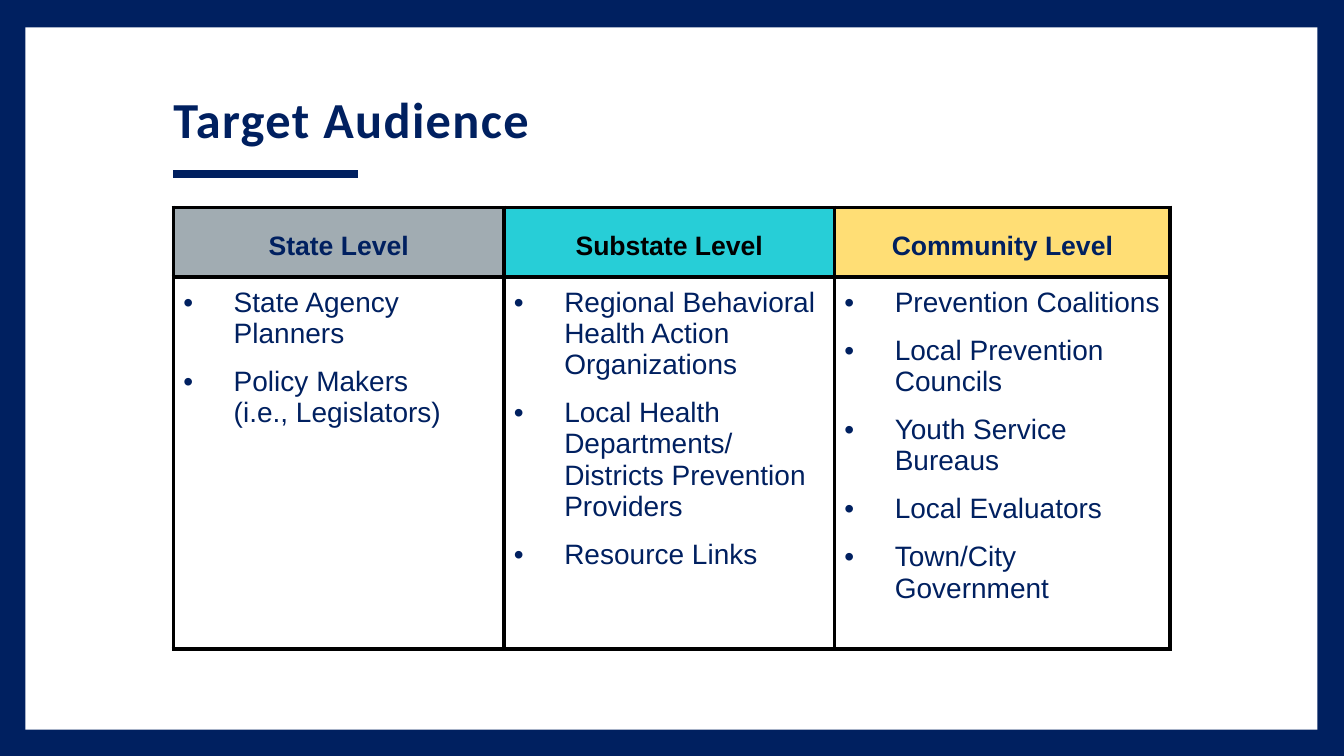
"""Build the Target Audience slide with its three-level table."""
from dataclasses import dataclass

import lxml.etree
import pptx
import pptx.dml.color
import pptx.enum.shapes
import pptx.enum.text
import pptx.oxml.ns
import pptx.util

Cm = pptx.util.Cm
Pt = pptx.util.Pt
ALIGN = pptx.enum.text.PP_ALIGN
ANCHOR = pptx.enum.text.MSO_ANCHOR
qn = pptx.oxml.ns.qn

COLORS = {
    "navy": "002060",
    "white": "FFFFFF",
    "black": "000000",
    "gray": "A1ACB2",
    "teal": "27CED7",
    "yellow": "FFDE75",
}
LEFT = Cm(4.37)
CELL_INSET = Cm(0.25)
HANGING = Cm(1.27)


@dataclass
class Level:
    heading: str
    fill: str
    heading_color: str
    width: float
    members: list[str]


LEVELS = [
    Level("State Level", "gray", "navy", 8.33,
          ["State Agency Planners", "Policy Makers\n(i.e., Legislators)"]),
    Level("Substate Level", "teal", "black", 8.33,
          ["Regional Behavioral Health Action Organizations",
           "Local Health Departments/ Districts Prevention Providers",
           "Resource Links"]),
    Level("Community Level", "yellow", "navy", 8.46,
          ["Prevention Coalitions", "Local Prevention Councils",
           "Youth Service Bureaus", "Local Evaluators",
           "Town/City Government"]),
]


def rgb(name: str) -> pptx.dml.color.RGBColor:
    return pptx.dml.color.RGBColor.from_string(COLORS[name])


def write(paragraph, text: str, *, size: float, color: str = "navy",
          font: str = "Arial", bold: bool = False, align=ALIGN.LEFT,
          line_spacing=None, space_after: float = 0, tracking: int = 0,
          bullet: bool = False) -> None:
    paragraph.text = text
    paragraph.alignment = align
    paragraph.line_spacing = line_spacing
    paragraph.space_after = Pt(space_after)
    for run in paragraph.runs:
        run.font.name = font
        run.font.size = Pt(size)
        run.font.bold = bold
        run.font.color.rgb = rgb(color)
        if tracking:
            run.font._element.set("spc", str(tracking))
    if bullet:
        properties = paragraph._p.get_or_add_pPr()
        properties.set("marL", str(HANGING))
        properties.set("indent", str(-HANGING))
        bullet_font = lxml.etree.SubElement(properties, qn("a:buFont"))
        bullet_font.set("typeface", "Arial")
        lxml.etree.SubElement(properties, qn("a:buChar")).set("char", "•")


def frame_cell(cell, anchor) -> None:
    cell.vertical_anchor = anchor
    cell.margin_left = cell.margin_right = CELL_INSET
    cell.margin_top = cell.margin_bottom = CELL_INSET
    properties = cell._tc.get_or_add_tcPr()
    for side in ("a:lnL", "a:lnR", "a:lnT", "a:lnB"):
        border = lxml.etree.SubElement(properties, qn(side), w=str(Pt(3)))
        solid = lxml.etree.SubElement(border, qn("a:solidFill"))
        lxml.etree.SubElement(solid, qn("a:srgbClr"), val=COLORS["black"])


def add_panel(slide) -> None:
    panel = slide.shapes.add_shape(
        pptx.enum.shapes.MSO_SHAPE.RECTANGLE,
        Cm(0.64), Cm(0.69), Cm(32.56), Cm(17.7))
    panel.shadow.inherit = False
    panel.fill.solid()
    panel.fill.fore_color.rgb = rgb("white")
    panel.line.fill.background()


def add_title(slide) -> None:
    title = slide.shapes.add_textbox(LEFT, Cm(0.28), Cm(27.48), Cm(3.45)).text_frame
    title.word_wrap = True
    title.vertical_anchor = ANCHOR.BOTTOM
    title.margin_left = title.margin_right = 0
    title.margin_top = title.margin_bottom = 0
    write(title.paragraphs[0], "Target Audience", size=36, font="Calibri",
          bold=True, line_spacing=0.8, space_after=6, tracking=100)


def add_underline(slide) -> None:
    underline = slide.shapes.add_connector(
        pptx.enum.shapes.MSO_CONNECTOR.STRAIGHT, LEFT, Cm(4.39), Cm(9.02), Cm(4.39))
    underline.line.color.rgb = rgb("navy")
    underline.line.width = Pt(6)
    lxml.etree.SubElement(underline._element.spPr, qn("a:effectLst"))


def add_audience_table(slide) -> None:
    width = Cm(sum(level.width for level in LEVELS))
    table = slide.shapes.add_table(
        2, len(LEVELS), LEFT, Cm(5.23), width, Cm(11.13)).table
    table.first_row = table.horz_banding = False
    table.rows[0].height = Cm(1.75)
    table.rows[1].height = Cm(9.38)
    for column, level in enumerate(LEVELS):
        table.columns[column].width = Cm(level.width)

        heading = table.cell(0, column)
        frame_cell(heading, ANCHOR.MIDDLE)
        heading.fill.solid()
        heading.fill.fore_color.rgb = rgb(level.fill)
        write(heading.text_frame.paragraphs[0], level.heading, size=19, bold=True,
              color=level.heading_color, align=ALIGN.CENTER, line_spacing=Pt(26.4))

        body = table.cell(1, column)
        frame_cell(body, ANCHOR.TOP)
        body.fill.background()
        for index, member in enumerate(level.members):
            frame = body.text_frame
            paragraph = frame.add_paragraph() if index else frame.paragraphs[0]
            write(paragraph, member, size=20, space_after=12, bullet=True)


def main() -> None:
    deck = pptx.Presentation()
    deck.slide_width, deck.slide_height = Cm(33.87), Cm(19.05)
    slide = deck.slides.add_slide(deck.slide_layouts[6])
    slide.background.fill.solid()
    slide.background.fill.fore_color.rgb = rgb("navy")
    add_panel(slide)
    add_title(slide)
    add_audience_table(slide)
    add_underline(slide)
    deck.save("out.pptx")


if __name__ == "__main__":
    main()
